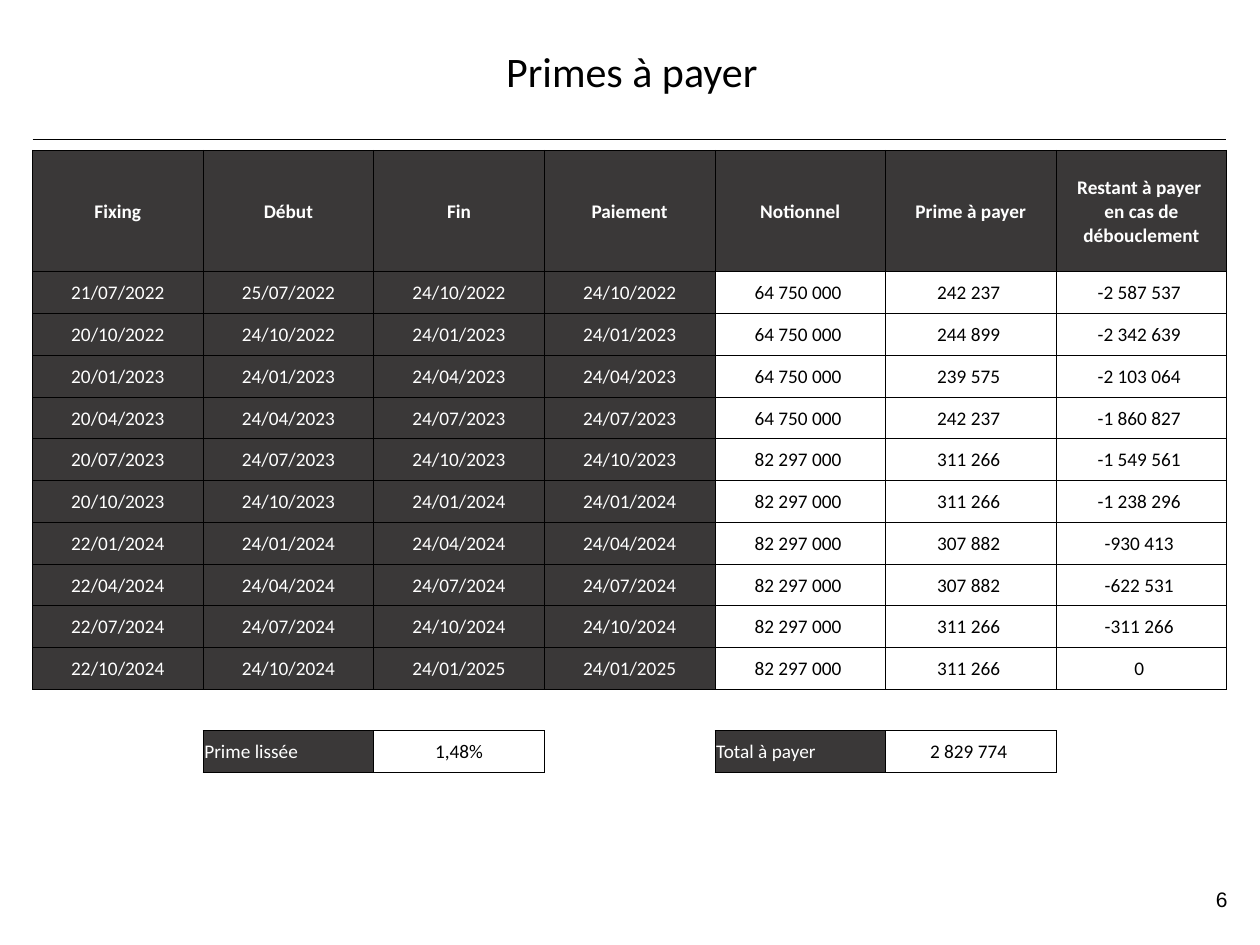
import dataclasses

import pptx
import pptx.dml.color
import pptx.enum.shapes
import pptx.enum.text
import pptx.oxml
import pptx.oxml.ns
import pptx.util

Pt = pptx.util.Pt
RGB = pptx.dml.color.RGBColor.from_string
ALIGN = pptx.enum.text.PP_ALIGN
ANCHOR = pptx.enum.text.MSO_ANCHOR


@dataclasses.dataclass(frozen=True)
class Theme:
    ink: str = "000000"
    dark: str = "3A3838"
    light: str = "FFFFFF"
    font: str = "Calibri"
    number_font: str = "Arial"
    title_size: float = 24
    table_size: float = 11
    number_size: float = 12
    rule_width: float = 0.75
    border_width: float = 0.5


THEME = Theme()

HEADINGS = ["Fixing", "Début", "Fin", "Paiement", "Notionnel", "Prime à payer",
            "Restant à payer \nen cas de débouclement"]

# Fixing, start, end (also the payment date), notional, premium, remainder
PERIODS = [
    ("21/07/2022", "25/07/2022", "24/10/2022", "64 750 000 ", "242 237 ", "-2 587 537 "),
    ("20/10/2022", "24/10/2022", "24/01/2023", "64 750 000 ", "244 899 ", "-2 342 639 "),
    ("20/01/2023", "24/01/2023", "24/04/2023", "64 750 000 ", "239 575 ", "-2 103 064 "),
    ("20/04/2023", "24/04/2023", "24/07/2023", "64 750 000 ", "242 237 ", "-1 860 827 "),
    ("20/07/2023", "24/07/2023", "24/10/2023", "82 297 000 ", "311 266 ", "-1 549 561 "),
    ("20/10/2023", "24/10/2023", "24/01/2024", "82 297 000 ", "311 266 ", "-1 238 296 "),
    ("22/01/2024", "24/01/2024", "24/04/2024", "82 297 000 ", "307 882 ", "-930 413 "),
    ("22/04/2024", "24/04/2024", "24/07/2024", "82 297 000 ", "307 882 ", "-622 531 "),
    ("22/07/2024", "24/07/2024", "24/10/2024", "82 297 000 ", "311 266 ", "-311 266 "),
    ("22/10/2024", "24/10/2024", "24/01/2025", "82 297 000 ", "311 266 ", "0 "),
]
SUMMARY = ["", "Prime lissée", "1,48%", "", "Total à payer", "2 829 774 ", ""]
SUMMARY_LABELS = (1, 4)
DATE_COLUMNS = 4


def write(paragraph, text, size, color, font=THEME.font, align=ALIGN.CENTER, bold=False):
    paragraph.alignment = align
    run = paragraph.add_run()
    run.text = text
    run.font.name = font
    run.font.size = Pt(size)
    run.font.bold = bold
    run.font.color.rgb = RGB(color)


def place(shape, box):
    shape.left, shape.top, shape.width, shape.height = (Pt(v) for v in box)


def add_title(slide, box):
    title = slide.shapes.title
    place(title, box)
    title.text_frame.vertical_anchor = ANCHOR.MIDDLE
    write(title.text_frame.paragraphs[0], "Primes à payer", THEME.title_size, THEME.ink)


def add_rule(slide, box):
    left, top, width, height = box
    rule = slide.shapes.add_connector(
        pptx.enum.shapes.MSO_CONNECTOR.STRAIGHT,
        Pt(left), Pt(top), Pt(left + width), Pt(top + height))
    rule.line.color.rgb = RGB(THEME.ink)
    rule.line.width = Pt(THEME.rule_width)
    properties = rule.element.find(pptx.oxml.ns.qn("p:spPr"))
    properties.append(pptx.oxml.parse_xml(
        f"<a:effectLst {pptx.oxml.ns.nsdecls('a')}/>"))


def add_page_number(slide, box):
    number = slide.shapes.add_textbox(*(Pt(v) for v in box))
    number.text_frame.word_wrap = True
    write(number.text_frame.paragraphs[0], "6", THEME.number_size, THEME.ink,
          font=THEME.number_font, align=ALIGN.RIGHT)


def set_border(cell, side, drawn):
    """Call before the cell is filled: lines precede the fill in tcPr."""
    paint = (f'<a:solidFill><a:srgbClr val="{THEME.ink}"/></a:solidFill>'
             if drawn else "<a:noFill/>")
    cell._tc.get_or_add_tcPr().append(pptx.oxml.parse_xml(
        f'<a:ln{side} {pptx.oxml.ns.nsdecls("a")} w="{Pt(THEME.border_width)}">'
        f"{paint}</a:ln{side}>"))


def add_schedule(slide, box, header_height):
    rows = [HEADINGS]
    rows += [(fixing, start, end, end, *amounts)
             for fixing, start, end, *amounts in PERIODS]
    spacer_row = len(rows)
    rows += [[""] * len(HEADINGS), SUMMARY]
    summary_row = spacer_row + 1

    frame = slide.shapes.add_table(len(rows), len(HEADINGS), *(Pt(v) for v in box))
    table = frame.table
    table.first_row = table.horz_banding = False
    for column in table.columns:
        column.width = Pt(box[2] / len(HEADINGS))
    for r, row in enumerate(table.rows):
        row.height = Pt(header_height if r == 0
                        else (box[3] - header_height) / (len(rows) - 1))

    def has_text(r, c):
        return 0 <= r < len(rows) and 0 <= c < len(HEADINGS) and rows[r][c] != ""

    for r, texts in enumerate(rows):
        for c, text in enumerate(texts):
            cell = table.cell(r, c)
            cell.margin_left = cell.margin_right = cell.margin_top = Pt(0.7)
            cell.margin_bottom = 0
            cell.vertical_anchor = ANCHOR.MIDDLE

            # An edge is drawn when a cell on either side of it holds text
            for side, dr, dc in (("L", 0, -1), ("R", 0, 1), ("T", -1, 0), ("B", 1, 0)):
                set_border(cell, side, has_text(r, c) or has_text(r + dr, c + dc))

            label = r == summary_row and c in SUMMARY_LABELS
            dark = r == 0 or label or (r < spacer_row and c < DATE_COLUMNS)
            if dark:
                cell.fill.solid()
                cell.fill.fore_color.rgb = RGB(THEME.dark)
            else:
                cell.fill.background()
            if not text:
                continue
            for i, line in enumerate(text.split("\n")):
                lines = cell.text_frame
                paragraph = lines.add_paragraph() if i else lines.paragraphs[0]
                write(paragraph, line, THEME.table_size,
                      THEME.light if dark else THEME.ink,
                      align=ALIGN.LEFT if label else ALIGN.CENTER, bold=r == 0)


def main():
    deck = pptx.Presentation()
    deck.slide_width, deck.slide_height = Pt(720), Pt(540)
    slide = deck.slides.add_slide(deck.slide_layouts[5])  # Title Only
    add_rule(slide, (18.7, 79.6, 681.9, 0))
    add_page_number(slide, (540.7, 503.3, 167.8, 25.9))
    add_title(slide, (123.8, 22.6, 474.5, 36))
    add_schedule(slide, (18.6, 85.9, 682.5, 355.7), header_height=69.5)
    deck.save("out.pptx")


if __name__ == "__main__":
    main()
